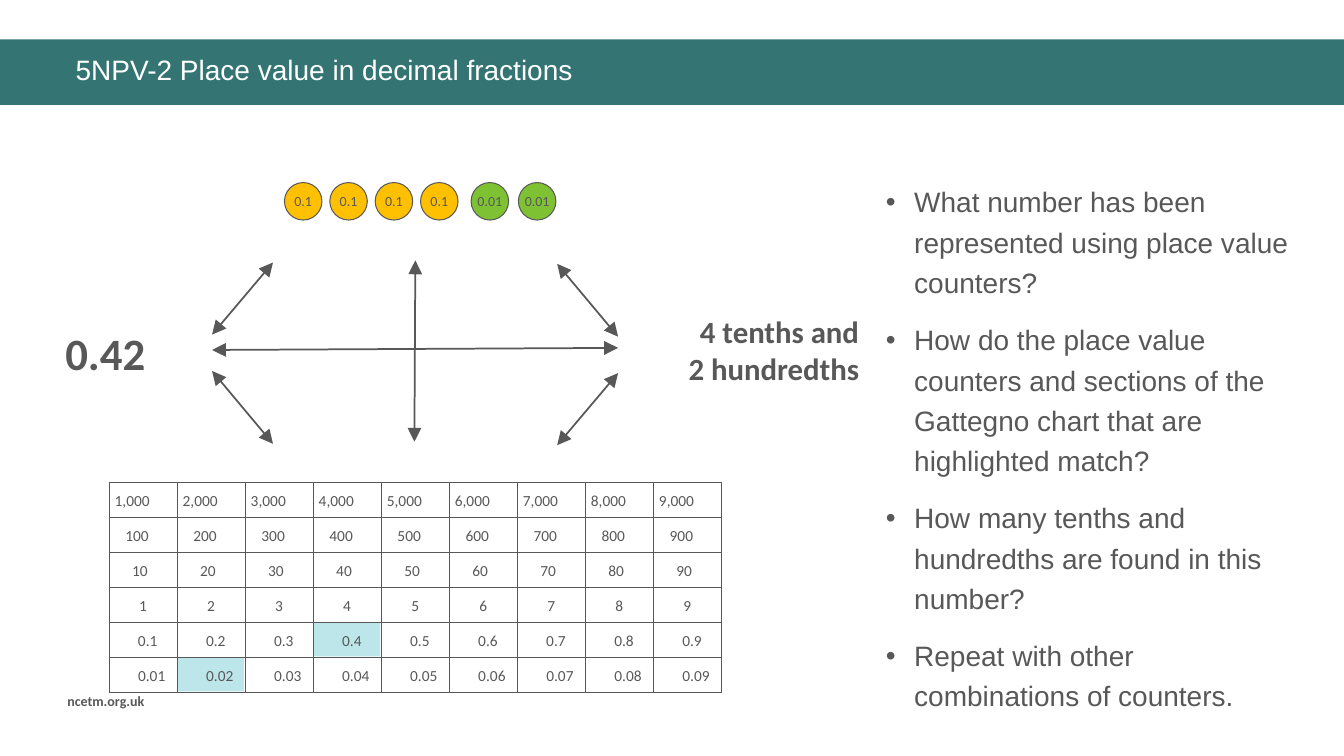
from pptx import Presentation
from pptx.dml.color import RGBColor
from pptx.enum.shapes import MSO_CONNECTOR, MSO_SHAPE
from pptx.enum.text import MSO_ANCHOR, MSO_AUTO_SIZE, PP_ALIGN
from pptx.oxml import parse_xml
from pptx.oxml.ns import nsdecls, qn
from pptx.util import Pt

TEAL = RGBColor(0x34, 0x75, 0x74)
GREY = RGBColor(0x58, 0x58, 0x58)
WHITE = RGBColor(0xFF, 0xFF, 0xFF)
AMBER = RGBColor(0xFF, 0xC0, 0x00)
GREEN = RGBColor(0x7E, 0xC2, 0x34)
PALE_BLUE = RGBColor(0xBC, 0xE6, 0xEA)


def style(tf, size, name="Calibri", bold=False, color=GREY, align=PP_ALIGN.LEFT):
    for p in tf.paragraphs:
        p.alignment = align
        for r in p.runs:
            r.font.size = Pt(size)
            r.font.name = name
            r.font.bold = bold
            r.font.color.rgb = color


def add_filled(shape, x, y, w, h, color):
    sp = s.shapes.add_shape(shape, Pt(x), Pt(y), Pt(w), Pt(h))
    sp.shadow.inherit = False
    sp.fill.solid()
    sp.fill.fore_color.rgb = color
    sp.line.fill.background()
    return sp


prs = Presentation()
prs.slide_width = Pt(960)
prs.slide_height = Pt(540)
s = prs.slides.add_slide(prs.slide_layouts[5])

title = s.shapes.title
title.left, title.top, title.width, title.height = Pt(46.8), Pt(36.7), Pt(887), Pt(34)
tf = title.text_frame
tf.text = "5NPV-2 Place value in decimal fractions"
tf.vertical_anchor = MSO_ANCHOR.TOP
tf.auto_size = MSO_AUTO_SIZE.NONE
tf.paragraphs[0].line_spacing = 0.9
style(tf, 20, "Arial", color=WHITE)

band = add_filled(MSO_SHAPE.RECTANGLE, 0, 28.2, 960, 46.8, TEAL)
title.element.addprevious(band.element)

labels = [
    ("ncetm.org.uk", 41, 491, 87, 19.5, 10, PP_ALIGN.LEFT, True),
    ("0.42", 39.6, 229, 77, 46, 32, PP_ALIGN.LEFT, False),
    ("4 tenths and\n2 hundredths", 483.2, 219.6, 137.5, 60.5, 22, PP_ALIGN.RIGHT, False),
]
for text, x, y, w, h, size, align, wrap in labels:
    tf = s.shapes.add_textbox(Pt(x), Pt(y), Pt(w), Pt(h)).text_frame
    tf.text = text
    tf.word_wrap = wrap
    style(tf, size, bold=True, align=align)

arrows = [
    (151.5, 239, 195, 187.5),
    (398, 188.5, 441.5, 240.5),
    (151.5, 265, 195, 317),
    (398, 318, 441.5, 266.5),
    (151.5, 250, 441.5, 248.5),
    (296, 315.5, 296.7, 186),
]
for x1, y1, x2, y2 in arrows:
    c = s.shapes.add_connector(MSO_CONNECTOR.STRAIGHT, Pt(x1), Pt(y1), Pt(x2), Pt(y2))
    c.line.color.rgb = GREY
    c.line.width = Pt(1.25)
    spPr = c.element.spPr
    for end in ("headEnd", "tailEnd"):
        spPr.find(qn("a:ln")).append(parse_xml(
            f'<a:{end} {nsdecls("a")} type="triangle" w="lg" len="lg"/>'))
    spPr.append(parse_xml(f'<a:effectLst {nsdecls("a")}/>'))

counters = [("0.1", 203.2 + 32.4 * i, AMBER) for i in range(4)]
counters += [("0.01", 336.5 + 33.8 * i, GREEN) for i in range(2)]
for text, x, color in counters:
    sp = add_filled(MSO_SHAPE.OVAL, x, 130.4, 26.8, 26.8, color)
    sp.line.color.rgb = GREY
    sp.line.width = Pt(0.75)
    tf = sp.text_frame
    tf.margin_left = tf.margin_right = tf.margin_top = tf.margin_bottom = 0
    tf.word_wrap = False
    tf.vertical_anchor = MSO_ANCHOR.MIDDLE
    tf.text = text
    style(tf, 10, align=PP_ALIGN.CENTER)

left, top, col_w, row_h = 78, 344.8, 48.6, 25
for row, col in ((4, 3), (5, 1)):
    add_filled(MSO_SHAPE.RECTANGLE, left + col * col_w, top + row * row_h, 47.7, 24, PALE_BLUE)

frame = s.shapes.add_table(6, 9, Pt(left), Pt(top), Pt(9 * col_w), Pt(6 * row_h))
table = frame.table
table.first_row = False
table.horz_banding = False
for col in table.columns:
    col.width = Pt(col_w)
for row in table.rows:
    row.height = Pt(row_h)
for cell in table.iter_cells():
    cell.margin_left = cell.margin_right = cell.margin_top = cell.margin_bottom = 0
    cell.fill.background()
for tcPr in frame.element.iter(qn("a:tcPr")):
    for k, side in enumerate(("lnL", "lnR", "lnT", "lnB")):
        tcPr.insert(k, parse_xml(
            f'<a:{side} {nsdecls("a")} w="{Pt(1)}"><a:solidFill>'
            f'<a:srgbClr val="{GREY}"/></a:solidFill></a:{side}>'))

gattegno_rows = [
    (1000, 0, -3.2, 42.5, 0),
    (100, 0, -3.2, 42.5, 7.5),
    (10, 0, -3.2, 42, 12.4),
    (1, 0, -3.2, 42, 17.4),
    (0.1, 1, -1.6, 48.2, 15),
    (0.01, 2, -1.6, 54, 15),
]
for i, (scale, places, shift, w, indent) in enumerate(gattegno_rows):
    for j in range(9):
        tf = s.shapes.add_textbox(Pt(left + j * col_w + shift), Pt(347 + i * row_h),
                                  Pt(w), Pt(20.6)).text_frame
        tf.word_wrap = True
        tf.margin_left = Pt(7.2 + indent)
        tf.text = f"{(j + 1) * scale:,.{places}f}"
        style(tf, 11)

questions = [
    "What number has been represented using place value counters?",
    "How do the place value counters and sections of the Gattegno chart that are highlighted match?",
    "How many tenths and hundredths are found in this number?",
    "Repeat with other combinations of counters.",
]
tf = s.shapes.add_textbox(Pt(625.7), Pt(123.8), Pt(306), Pt(394.5)).text_frame
tf.word_wrap = True
tf.text = "\n".join(questions)
for i, p in enumerate(tf.paragraphs):
    pPr = p._p.get_or_add_pPr()
    pPr.set("marL", str(Pt(20.2)))
    pPr.set("indent", str(Pt(-20.2)))
    pPr.append(parse_xml(f'<a:buClr {nsdecls("a")}><a:srgbClr val="{GREY}"/></a:buClr>'))
    pPr.append(parse_xml(f'<a:buFont {nsdecls("a")} typeface="Arial"/>'))
    pPr.append(parse_xml(f'<a:buChar {nsdecls("a")} char="•"/>'))
    p.line_spacing = 1.2
    p.space_before = Pt(6 if i else 0)
    p.space_after = Pt(6)
style(tf, 20, "Arial")

prs.save("out.pptx")
